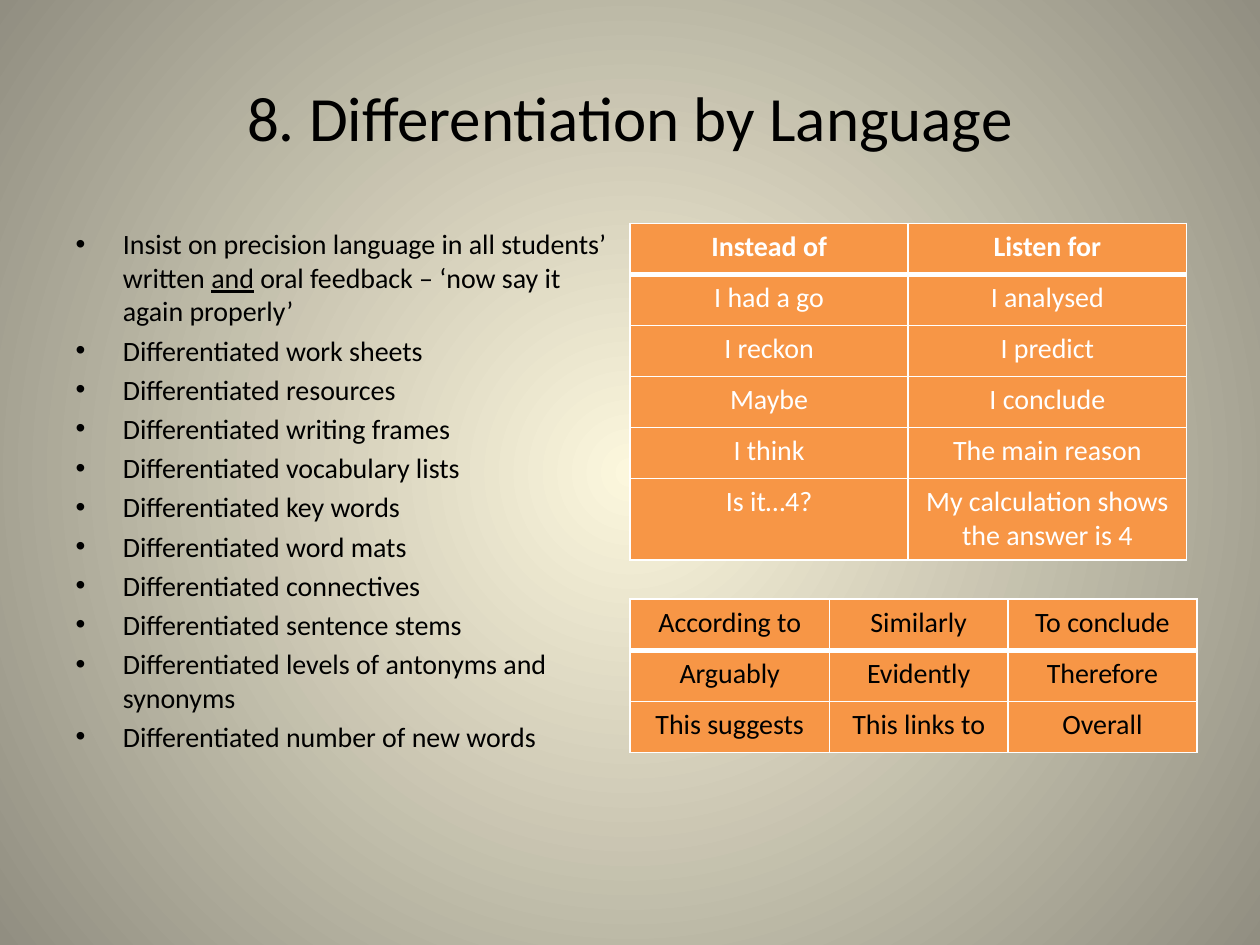
import pptx
import pptx.dml.color
import pptx.enum.text
import pptx.oxml
import pptx.oxml.ns
import pptx.util
import lxml.etree

Pt = pptx.util.Pt
RGBColor = pptx.dml.color.RGBColor
qn = pptx.oxml.ns.qn

BLACK = RGBColor(0x00, 0x00, 0x00)
WHITE = RGBColor(0xFF, 0xFF, 0xFF)
ORANGE = RGBColor(0xF7, 0x96, 0x46)
CREAM = RGBColor(0xFC, 0xF7, 0xDD)
STONE = RGBColor(0x91, 0x8E, 0x81)

TITLE = {"name": "Calibri", "size": Pt(36)}
BODY = {"name": "Calibri", "size": Pt(16)}
ROW = 29.2

# Each point is a list of (text, underlined) runs
POINTS = [[("Insist on precision language in all students’ written ", False),
           ("and", True),
           (" oral feedback – ‘now say it again properly’", False)]]
POINTS += [[("Differentiated " + end, False)] for end in (
    "work sheets", "resources", "writing frames", "vocabulary lists",
    "key words", "word mats", "connectives", "sentence stems",
    "levels of antonyms and synonyms", "number of new words")]

SWAPS = [("Instead of", "Listen for"),
         ("I had a go", "I analysed"),
         ("I reckon", "I predict"),
         ("Maybe", "I conclude"),
         ("I think", "The main reason"),
         ("Is it…4?", "My calculation shows the answer is 4")]

STEMS = [("According to", "Similarly", "To conclude"),
         ("Arguably", "Evidently", "Therefore"),
         ("This suggests", "This links to", "Overall")]


def style(font, form, color):
    for key, value in form.items():
        setattr(font, key, value)
    font.color.rgb = color


def place(shape, box):
    for key, value in zip(("left", "top", "width", "height"), box):
        setattr(shape, key, Pt(value))


def paint(slide):
    """Fill the background with a round gradient."""
    fill = slide.background.fill
    fill.gradient()
    for stop, color in zip(fill.gradient_stops, (CREAM, STONE)):
        stop.color.rgb = color
    grad = slide.element.find(".//" + qn("a:gradFill"))
    grad.remove(grad.find(qn("a:lin")))
    ring = lxml.etree.SubElement(grad, qn("a:path"))
    ring.set("path", "circle")
    rect = lxml.etree.SubElement(ring, qn("a:fillToRect"))
    for side in "ltrb":
        rect.set(side, "50000")


def head(slide, box, text):
    title = slide.shapes.title
    place(title, box)
    title.text_frame.text = text
    style(title.text_frame.paragraphs[0].runs[0].font, TITLE, BLACK)


def points(slide, box, items):
    body = slide.placeholders[1]
    place(body, box)
    frame = body.text_frame
    frame.auto_size = pptx.enum.text.MSO_AUTO_SIZE.NONE
    for i, item in enumerate(items):
        para = frame.add_paragraph() if i else frame.paragraphs[0]
        for text, under in item:
            run = para.add_run()
            run.text = text
            style(run.font, BODY | {"underline": under}, BLACK)


def edge(cell, side, width):
    line = lxml.etree.SubElement(cell._tc.get_or_add_tcPr(), qn("a:ln" + side))
    line.set("w", str(Pt(width)))
    fill = lxml.etree.SubElement(line, qn("a:solidFill"))
    lxml.etree.SubElement(fill, qn("a:srgbClr")).set("val", str(WHITE))


def grid(slide, box, rows, cols, color, bold):
    """Draw an orange table with a thick rule below its first row."""
    table = slide.shapes.add_table(
        len(rows), len(cols), *(Pt(v) for v in box)).table
    for col, width in zip(table.columns, cols):
        col.width = Pt(width)
    for r, texts in enumerate(rows):
        table.rows[r].height = Pt(ROW)
        for c, text in enumerate(texts):
            cell = table.cell(r, c)
            # Borders go before the fill in the cell's XML
            widths = {"L": 1, "R": 1, "T": 3 if r == 1 else 1,
                      "B": 3 if r == 0 else 1}
            for side, width in widths.items():
                edge(cell, side, width)
            cell.fill.solid()
            cell.fill.fore_color.rgb = ORANGE
            para = cell.text_frame.paragraphs[0]
            para.alignment = pptx.enum.text.PP_ALIGN.CENTER
            run = para.add_run()
            run.text = text
            style(run.font, BODY | {"bold": bold and r == 0}, color)


def main():
    deck = pptx.Presentation()
    deck.slide_width, deck.slide_height = Pt(720), Pt(540)
    slide = deck.slides.add_slide(deck.slide_layouts[1])
    paint(slide)
    head(slide, (36, 21.6, 648, 90), "8. Differentiation by Language")
    points(slide, (36, 126, 318, 356.4), POINTS)
    # Phrases to swap, then sentence stems
    grid(slide, (360, 127.6, 318, 6 * ROW), SWAPS, (159, 159), WHITE, True)
    grid(slide, (360, 342.4, 324, 3 * ROW), STEMS, (114, 102, 108),
         BLACK, False)
    deck.save("out.pptx")


if __name__ == "__main__":
    main()
